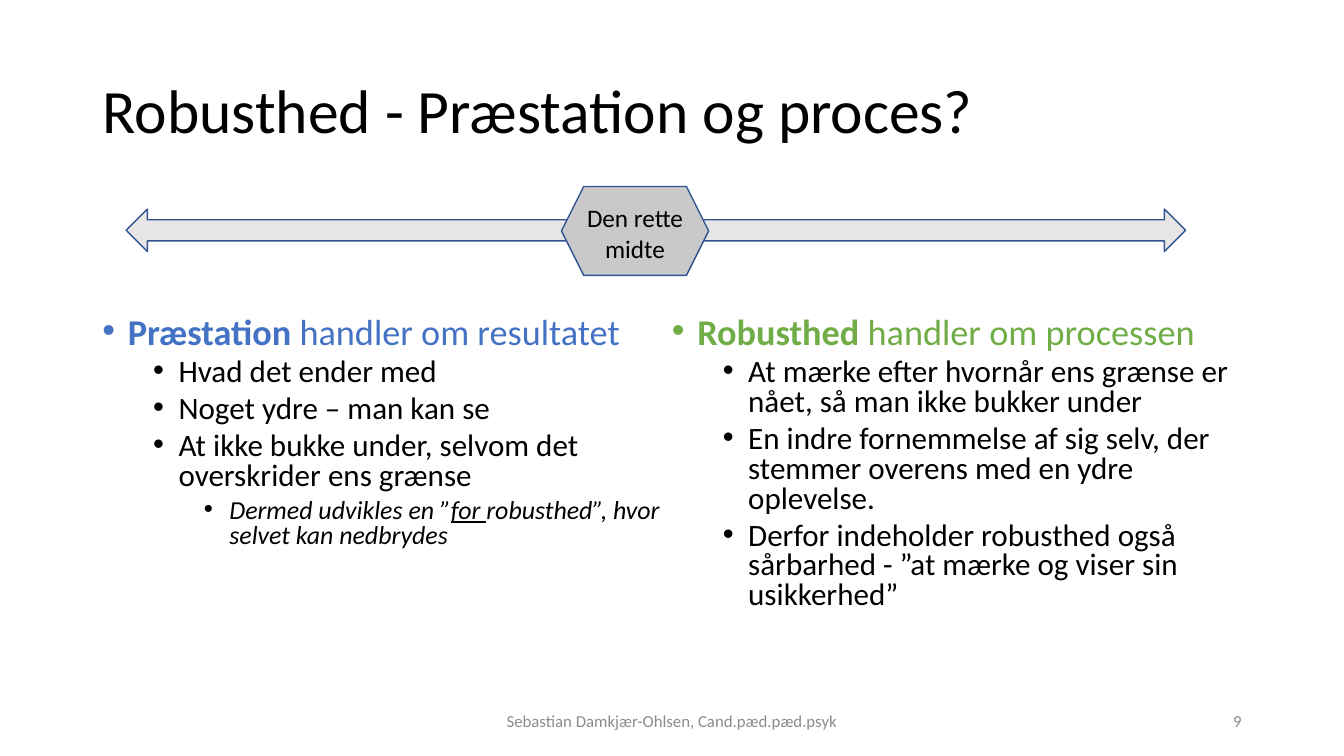
from pptx import Presentation
from pptx import util as u
from pptx.dml.color import RGBColor
from pptx.enum import shapes, text
from pptx.oxml.ns import qn
from lxml import etree

# Content: each point is (level, [(words, style)]), with b, i, u as styles
TITLE = "Robusthed - Præstation og proces?"
MIDDLE = "Den rette midte"
COLUMNS = [
    ("blue", [
        (0, [("Præstation", "b"), (" handler om resultatet", "")]),
        (1, [("Hvad det ender med", "")]),
        (1, [("Noget ydre – man kan se", "")]),
        (1, [("At ikke bukke under, selvom det overskrider ens grænse", "")]),
        (2, [("Dermed udvikles en ”", "i"), ("for ", "iu"),
             ("robusthed”, hvor selvet kan nedbrydes", "i")]),
    ]),
    ("green", [
        (0, [("Robusthed", "b"), (" handler om processen", "")]),
        (1, [("At mærke efter hvornår ens grænse er nået, "
              "så man ikke bukker under", "")]),
        (1, [("En indre fornemmelse af sig selv, der stemmer overens "
              "med en ydre oplevelse.", "")]),
        (1, [("Derfor indeholder robusthed også sårbarhed - "
              "”at mærke og viser sin usikkerhed”", "")]),
    ]),
]
# Footer: words, left, width, alignment
FOOTER = [
    ("Sebastian Damkjær-Ohlsen, Cand.pæd.pæd.psyk", 11.22, 11.43, "CENTER"),
    ("9", 23.92, 7.62, "RIGHT"),
]
COLORS = {"black": "000000", "blue": "4472C4", "green": "70AD47",
          "arrow": "E7E6E6", "middle": "C9C9C9", "line": "325491",
          "footer": "8C8C8C"}
SIZES = [25.9, 22.2, 18.5]
BEFORE = [10, 5, 5]
LEFT, WIDTH, INSET = 2.33, 29.21, 0.25
HANG = u.Cm(0.64)


def color(name):
    return RGBColor.from_string(COLORS[name])


def style(run, size, name, marks=""):
    font = run.font
    font.name, font.size = "Calibri", u.Pt(size)
    font.color.rgb = color(name)
    font.bold, font.italic = "b" in marks, "i" in marks
    if "u" in marks:
        font.underline = True


def box(left, top, width, height):
    frame = slide.shapes.add_textbox(
        u.Cm(left), u.Cm(top), u.Cm(width), u.Cm(height)).text_frame
    frame.word_wrap = True
    return frame


def figure(kind, fill, left, top, width, height):
    shape = slide.shapes.add_shape(
        kind, u.Cm(left), u.Cm(top), u.Cm(width), u.Cm(height))
    shape.shadow.inherit = False
    shape.fill.solid()
    shape.fill.fore_color.rgb = color(fill)
    shape.line.color.rgb = color("line")
    shape.line.width = u.Pt(1)
    return shape


def bullet(para, level):
    para.level = level
    para.line_spacing = 0.8
    para.space_before = u.Pt(BEFORE[level])
    props = para._p.get_or_add_pPr()
    props.set("marL", str(HANG * (1 + 2 * level)))
    props.set("indent", str(-HANG))
    etree.SubElement(props, qn("a:buFont")).set("typeface", "Arial")
    etree.SubElement(props, qn("a:buChar")).set("char", "•")


deck = Presentation()
deck.slide_width, deck.slide_height = u.Cm(33.87), u.Cm(19.05)
slide = deck.slides.add_slide(deck.slide_layouts[5])

# Title
title = slide.shapes.title
title.left, title.top = u.Cm(LEFT), u.Cm(1.01)
title.width, title.height = u.Cm(WIDTH), u.Cm(3.68)
title.text_frame.text = TITLE
title.text_frame.vertical_anchor = text.MSO_ANCHOR.MIDDLE
head = title.text_frame.paragraphs[0]
head.alignment = text.PP_ALIGN.LEFT
head.line_spacing = 0.9
style(head.runs[0], 44, "black")

# Two columns of points
step = WIDTH / 2 - INSET
for n, (accent, points) in enumerate(COLUMNS):
    frame = box(LEFT + n * step, 7.87, step + 2 * INSET, 10.36)
    for k, (level, parts) in enumerate(points):
        para = frame.add_paragraph() if k else frame.paragraphs[0]
        bullet(para, level)
        for words, marks in parts:
            run = para.add_run()
            run.text = words
            style(run, SIZES[level], "black" if level else accent, marks)

# Arrow with the middle on top
kinds = shapes.MSO_SHAPE
figure(kinds.LEFT_RIGHT_ARROW, "arrow", 3.18, 5.27, 26.7, 1.07)
hexagon = figure(kinds.HEXAGON, "middle", 14.15, 4.7, 3.71, 2.24)
frame = hexagon.text_frame
frame.text = MIDDLE
frame.word_wrap = True
frame.vertical_anchor = text.MSO_ANCHOR.MIDDLE
frame.margin_left = frame.margin_right = frame.margin_bottom = 0
frame.margin_top = u.Cm(0.1)
frame.paragraphs[0].alignment = text.PP_ALIGN.CENTER
style(frame.paragraphs[0].runs[0], 18, "black")

# Footer
for words, left, width, side in FOOTER:
    frame = box(left, 17.65, width, 1.02)
    frame.text = words
    frame.vertical_anchor = text.MSO_ANCHOR.MIDDLE
    frame.paragraphs[0].alignment = text.PP_ALIGN[side]
    style(frame.paragraphs[0].runs[0], 12, "footer")

deck.save("out.pptx")
